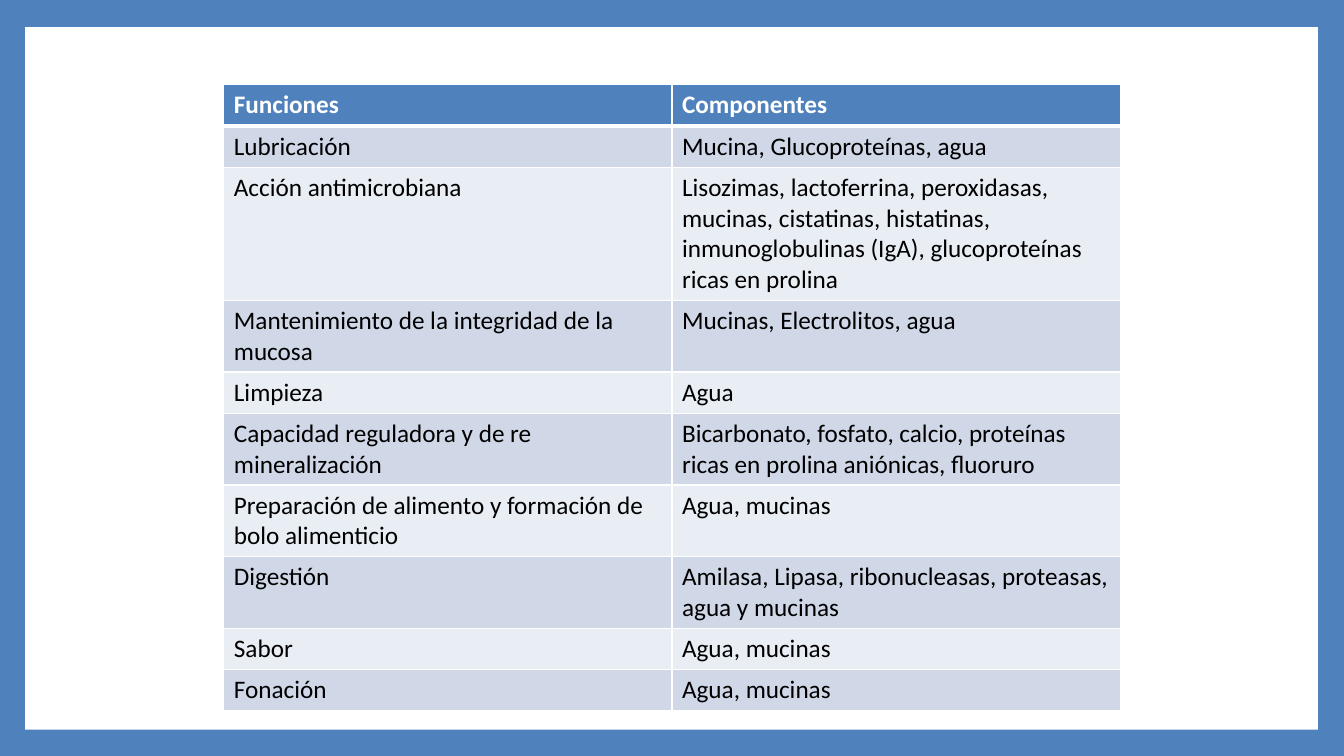
import dataclasses

import lxml.etree
import pptx
import pptx.dml.color
import pptx.enum.shapes
import pptx.oxml.ns
import pptx.util

Inches = pptx.util.Inches


@dataclasses.dataclass(frozen=True)
class Theme:
    font: str = "Calibri"
    text_size: int = 18
    accent: str = "4F81BD"
    paper: str = "FFFFFF"
    ink: str = "000000"
    bands: tuple[str, str] = ("D0D8E8", "E9EDF4")
    thin_border: int = 1
    thick_border: int = 3


@dataclasses.dataclass(frozen=True)
class SalivaFunction:
    name: str
    components: str


THEME = Theme()
HEADER = SalivaFunction("Funciones", "Componentes")
FUNCTIONS = [
    SalivaFunction("Lubricación", "Mucina, Glucoproteínas, agua"),
    SalivaFunction(
        "Acción antimicrobiana",
        "Lisozimas, lactoferrina, peroxidasas, mucinas, cistatinas, histatinas, "
        "inmunoglobulinas (IgA), glucoproteínas ricas en prolina",
    ),
    SalivaFunction("Mantenimiento de la integridad de la mucosa", "Mucinas, Electrolitos, agua"),
    SalivaFunction("Limpieza", "Agua"),
    SalivaFunction(
        "Capacidad reguladora y de re mineralización",
        "Bicarbonato, fosfato, calcio, proteínas ricas en prolina aniónicas, fluoruro",
    ),
    SalivaFunction("Preparación de alimento y formación de bolo alimenticio", "Agua, mucinas"),
    SalivaFunction("Digestión", "Amilasa, Lipasa, ribonucleasas, proteasas, agua y mucinas"),
    SalivaFunction("Sabor", "Agua, mucinas"),
    SalivaFunction("Fonación", "Agua, mucinas"),
]


def set_fill(target, color: str) -> None:
    target.fill.solid()
    target.fill.fore_color.rgb = pptx.dml.color.RGBColor.from_string(color)


def write_text(text_frame, text: str, *, color: str, bold: bool = False) -> None:
    run = text_frame.paragraphs[0].add_run()
    run.text = text
    run.font.name = THEME.font
    run.font.size = pptx.util.Pt(THEME.text_size)
    run.font.bold = bold
    run.font.color.rgb = pptx.dml.color.RGBColor.from_string(color)


def add_borders(cell, *, top: int, bottom: int) -> None:
    qualified = pptx.oxml.ns.qn
    properties = cell._tc.get_or_add_tcPr()
    widths = {"lnL": THEME.thin_border, "lnR": THEME.thin_border, "lnT": top, "lnB": bottom}
    for side, width in widths.items():
        line = lxml.etree.SubElement(properties, qualified(f"a:{side}"), w=str(pptx.util.Pt(width)))
        solid = lxml.etree.SubElement(line, qualified("a:solidFill"))
        lxml.etree.SubElement(solid, qualified("a:srgbClr"), val=THEME.paper)


def add_frame(slide) -> None:
    set_fill(slide.background, THEME.accent)
    panel = slide.shapes.add_shape(
        pptx.enum.shapes.MSO_SHAPE.RECTANGLE,
        Inches(0.25), Inches(0.27), Inches(12.82), Inches(6.97),
    )
    panel.shadow.inherit = False
    set_fill(panel, THEME.paper)
    panel.line.fill.background()


def add_functions_table(slide) -> None:
    entries = [HEADER, *FUNCTIONS]
    row_height = Inches(0.41)
    table = slide.shapes.add_table(
        len(entries), 2, Inches(2.22), Inches(0.84), Inches(8.89), row_height * len(entries)
    ).table
    for row_index, entry in enumerate(entries):
        table.rows[row_index].height = row_height
        is_header = row_index == 0
        for column_index, text in enumerate((entry.name, entry.components)):
            cell = table.cell(row_index, column_index)
            # The thick rule lies between the header and the first row
            add_borders(
                cell,
                top=THEME.thick_border if row_index == 1 else THEME.thin_border,
                bottom=THEME.thick_border if is_header else THEME.thin_border,
            )
            set_fill(cell, THEME.accent if is_header else THEME.bands[(row_index - 1) % 2])
            write_text(
                cell.text_frame, text, color=THEME.paper if is_header else THEME.ink, bold=is_header
            )


def main() -> None:
    presentation = pptx.Presentation()
    presentation.slide_width = Inches(13.33)
    presentation.slide_height = Inches(7.5)
    # Blank layout
    slide = presentation.slides.add_slide(presentation.slide_layouts[6])
    add_frame(slide)
    add_functions_table(slide)
    presentation.save("out.pptx")


if __name__ == "__main__":
    main()
